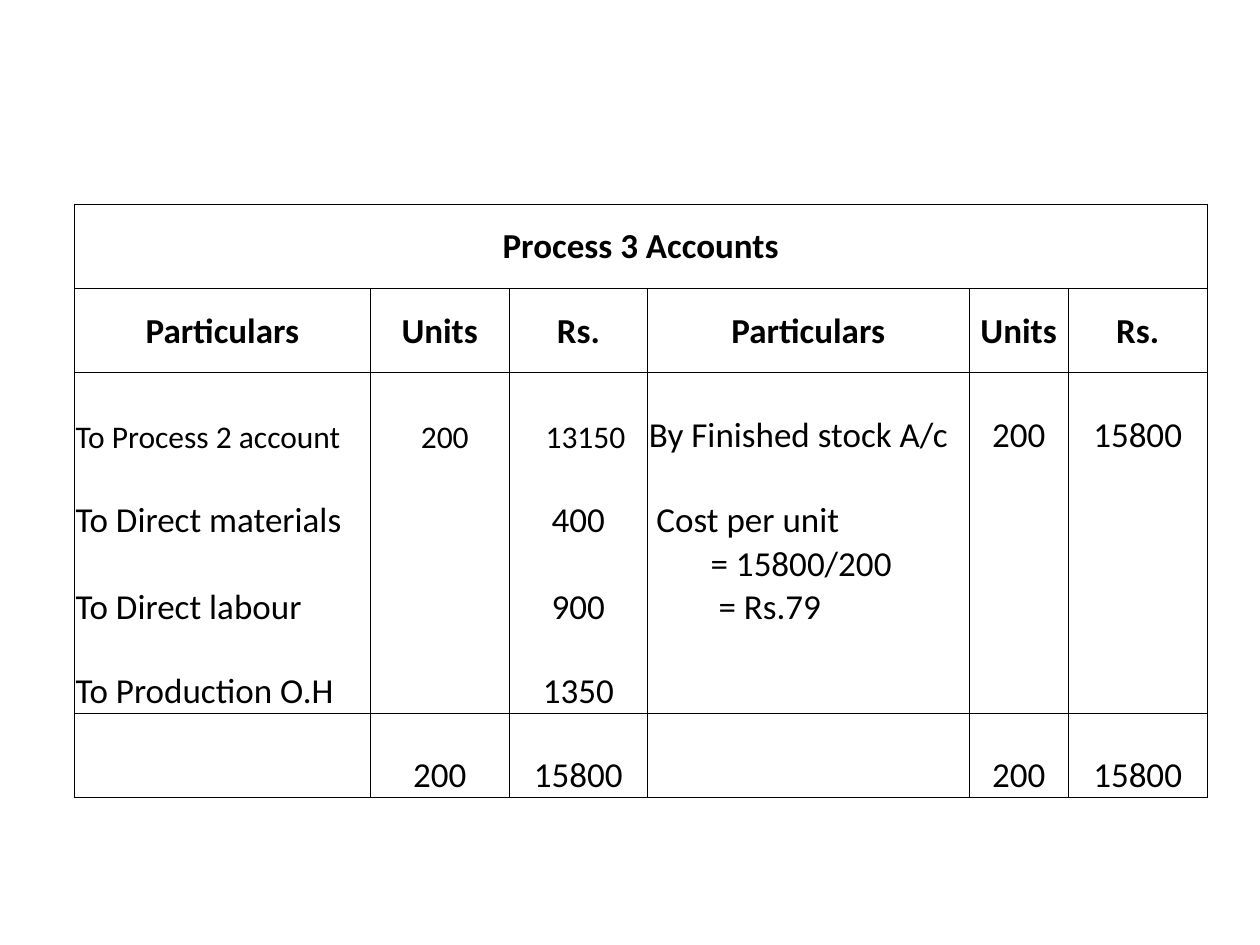
from lxml import etree
from pptx import Presentation
from pptx import util as u
from pptx.dml.color import RGBColor
from pptx.enum import text
from pptx.oxml import ns

BLACK = RGBColor(0, 0, 0)
WHITE = RGBColor(255, 255, 255)
CENTER, LEFT = text.PP_ALIGN.CENTER, text.PP_ALIGN.LEFT
MIDDLE, BOTTOM = text.MSO_ANCHOR.MIDDLE, text.MSO_ANCHOR.BOTTOM

COLUMN_WIDTHS = [2.35, 1.1, 1.1, 2.55, 0.79, 1.1]
ROW_HEIGHT = 0.67
LEDGER = [
    ["Process 3 Accounts", "", "", "", "", ""],
    ["Particulars", "Units", "Rs.", "Particulars", "Units", "Rs."],
    ["To Process 2 account", "200", "13150", "By Finished stock A/c", "200", "15800"],
    ["To Direct materials", "", "400", "Cost per unit", "", ""],
    ["To Direct labour", "", "900", "= 15800/200\n = Rs.79", "", ""],
    ["To Production O.H", "", "1350", "", "", ""],
    ["", "200", "15800", "", "200", "15800"],
]
HEADING_ROWS = (0, 1)
ENTRY_ROWS = range(2, 6)
TEXT_COLUMNS = (0, 3)
SMALL_CELLS = [(2, 0), (2, 1), (2, 2)]
INDENTS = {(2, 1): 0.4, (2, 2): 0.29, (3, 3): 0.07, (4, 3): 0.5}


class LedgerSlide:
    """Holds the ledger style and the slide it is applied to."""

    font = {"name": "Calibri", "size": u.Pt(20), "bold": False}
    margins = {"margin_left": u.Inches(0.01), "margin_right": u.Inches(0.01),
               "margin_top": u.Inches(0.01), "margin_bottom": 0}

    def __init__(self, slide):
        self.slide = slide

    def apply(self, target, values):
        for name, value in values.items():
            setattr(target, name, value)

    def borders(self, cell, sides):
        properties = cell._tc.get_or_add_tcPr()
        for side in "LRTB":
            line = etree.SubElement(properties, ns.qn(f"a:ln{side}"), w=str(u.Pt(0.5)))
            if side in sides:
                fill = etree.SubElement(line, ns.qn("a:solidFill"))
                etree.SubElement(fill, ns.qn("a:srgbClr"), val=str(BLACK))
            else:
                etree.SubElement(line, ns.qn("a:noFill"))

    def cell(self, cell, wording, sides, anchor, align, indent, **font):
        self.borders(cell, sides)
        cell.fill.solid()
        cell.fill.fore_color.rgb = WHITE
        margins = {**self.margins, "margin_left": u.Inches(indent)}
        self.apply(cell, {**margins, "vertical_anchor": anchor})
        cell.text = wording
        for paragraph in cell.text_frame.paragraphs:
            paragraph.alignment = align
            self.apply(paragraph.font, {**self.font, **font})
            for run in paragraph.runs:
                self.apply(run.font, {**self.font, **font})
                run.font.color.rgb = BLACK

    def table(self, left, top, rows, widths, height):
        frame = self.slide.shapes.add_table(
            len(rows), len(widths), u.Inches(left), u.Inches(top),
            u.Inches(sum(widths)), u.Inches(height * len(rows)))
        table = frame.table
        self.apply(table, {"first_row": False, "horz_banding": False})
        for column, width in zip(table.columns, widths):
            column.width = u.Inches(width)
        for row in table.rows:
            row.height = u.Inches(height)
        return table


def main():
    deck = Presentation()
    deck.slide_width, deck.slide_height = u.Inches(10), u.Inches(7.5)
    ledger = LedgerSlide(deck.slides.add_slide(deck.slide_layouts[6]))
    table = ledger.table(0.59, 1.62, LEDGER, COLUMN_WIDTHS, ROW_HEIGHT)
    for row, entries in enumerate(LEDGER):
        heading = row in HEADING_ROWS
        sides = "LR"
        if row not in ENTRY_ROWS[1:]:
            sides += "T"
        if row not in ENTRY_ROWS[:-1]:
            sides += "B"
        for column, wording in enumerate(entries):
            place = (row, column)
            left = not heading and (column in TEXT_COLUMNS or place in INDENTS)
            ledger.cell(table.cell(row, column), wording, sides,
                        MIDDLE if heading else BOTTOM, LEFT if left else CENTER,
                        INDENTS.get(place, 0.01), bold=heading,
                        size=u.Pt(18 if place in SMALL_CELLS else 20))
    table.cell(0, 0).merge(table.cell(0, len(COLUMN_WIDTHS) - 1))
    deck.save("out.pptx")


if __name__ == "__main__":
    main()
